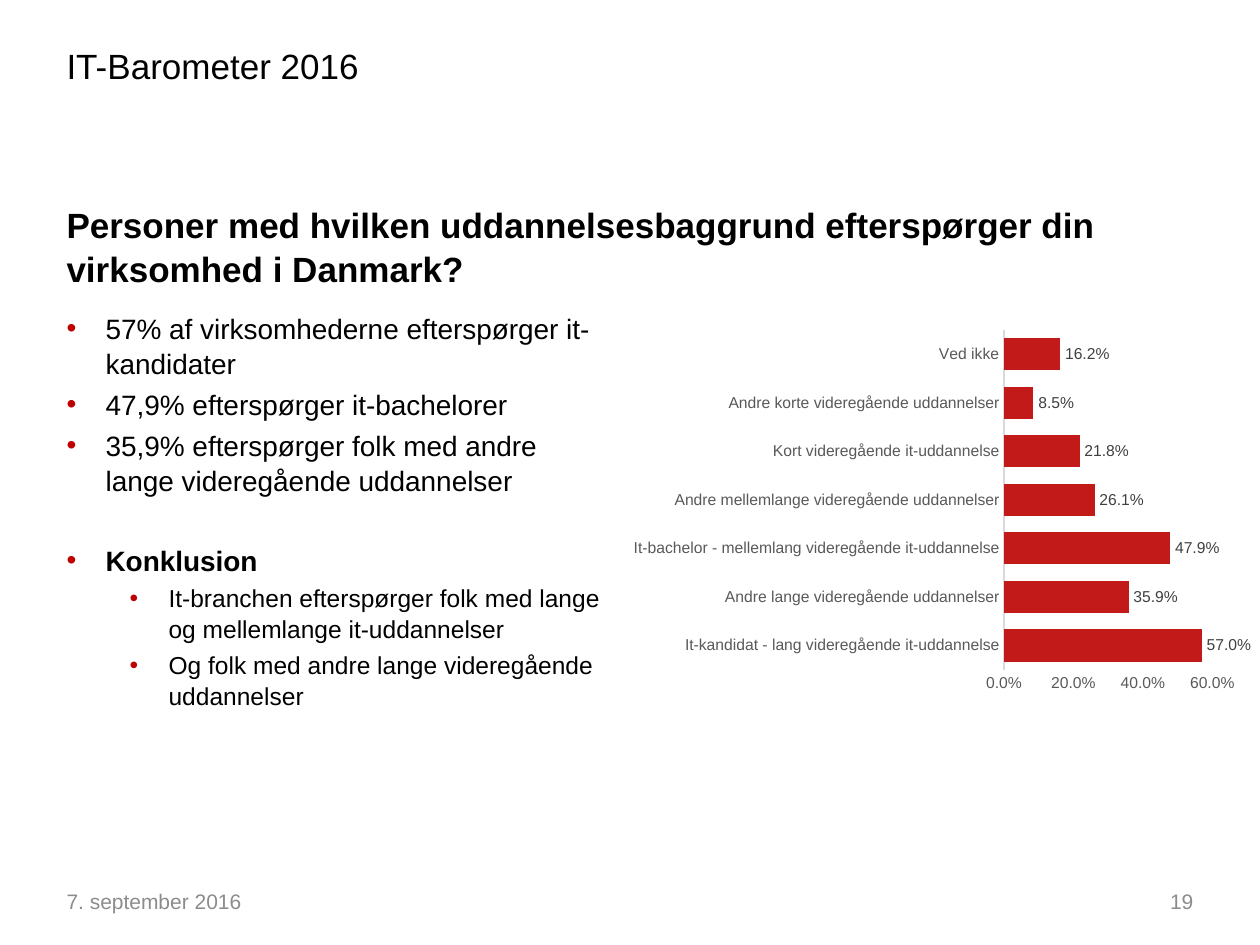
from dataclasses import dataclass
from typing import Optional

from lxml import etree
from pptx import Presentation
from pptx import util as u
from pptx.chart.data import CategoryChartData
from pptx.dml.color import RGBColor
from pptx.enum import chart as charts, text
from pptx.oxml.ns import qn

BLACK = RGBColor(0x00, 0x00, 0x00)
FOOTER_GREY = RGBColor(0x8C, 0x8C, 0x8C)
AXIS_GREY = RGBColor(0x59, 0x59, 0x59)
LABEL_GREY = RGBColor(0x40, 0x40, 0x40)
LINE_GREY = RGBColor(0xD9, 0xD9, 0xD9)
BULLET_RED = RGBColor(0xC0, 0x00, 0x00)
BAR_RED = RGBColor(0xC2, 0x19, 0x19)

FONT = "Arial"
LINE_SPACING = 1.05
MARGIN = 0.43
FOOTER_TOP, FOOTER_WIDTH = 6.95, 2.33
BULLET_HANG = 0.31
LEVEL_STEP = 0.5


@dataclass(frozen=True)
class Box:
    left: float
    top: float
    width: float
    height: float

    def lengths(self) -> tuple:
        return tuple(u.Inches(n) for n in (self.left, self.top, self.width, self.height))


@dataclass(frozen=True)
class Line:
    words: str
    size: float
    bold: bool = False
    color: RGBColor = BLACK
    level: Optional[int] = None  # bullet level; None for plain text
    extra_space: float = 0


@dataclass(frozen=True)
class Demand:
    education: str
    share: float


HEADINGS = [
    (Box(MARGIN, 0.29, 3.17, 0.4), Line("IT-Barometer 2016", 20)),
    (Box(MARGIN, 1.55, 9, 0.55),
     Line("Personer med hvilken uddannelsesbaggrund efterspørger din virksomhed i Danmark?",
          20, bold=True)),
]
DATE = Line("7. september 2016", 12, color=FOOTER_GREY)
PAGE_NUMBER = Line("19", 12, color=FOOTER_GREY)

FINDINGS = [
    Line("57% af virksomhederne efterspørger it-kandidater", 16, level=0),
    Line("47,9% efterspørger it-bachelorer", 16, level=0),
    Line("35,9% efterspørger folk med andre lange videregående uddannelser", 16, level=0),
    Line("Konklusion", 16, bold=True, level=0, extra_space=22.4),
    Line("It-branchen efterspørger folk med lange og mellemlange it-uddannelser", 14, level=1),
    Line("Og folk med andre lange videregående uddannelser", 14, level=1),
]

DEMANDS = [
    Demand("It-kandidat - lang videregående it-uddannelse", 0.57),
    Demand("Andre lange videregående uddannelser", 0.359),
    Demand("It-bachelor - mellemlang videregående it-uddannelse", 0.479),
    Demand("Andre mellemlange videregående uddannelser", 0.261),
    Demand("Kort videregående it-uddannelse", 0.218),
    Demand("Andre korte videregående uddannelser", 0.085),
    Demand("Ved ikke", 0.162),
]


def style_font(font, size: float, color: RGBColor, bold: bool = False) -> None:
    font.name = FONT
    font.size = u.Pt(size)
    font.bold = bold
    font.color.rgb = color


def add_bullet(paragraph, level: int) -> None:
    properties = paragraph._p.get_or_add_pPr()
    properties.set("marL", str(u.Inches(BULLET_HANG + LEVEL_STEP * level)))
    properties.set("indent", str(-u.Inches(BULLET_HANG)))
    color = etree.SubElement(properties, qn("a:buClr"))
    etree.SubElement(color, qn("a:srgbClr"), val=str(BULLET_RED))
    etree.SubElement(properties, qn("a:buFont"), typeface=FONT)
    etree.SubElement(properties, qn("a:buChar"), char="•")


def add_text(slide, box: Box, lines: list[Line], anchor=text.MSO_ANCHOR.TOP,
             alignment=text.PP_ALIGN.LEFT) -> None:
    frame = slide.shapes.add_textbox(*box.lengths()).text_frame
    frame.word_wrap = True
    frame.vertical_anchor = anchor
    for index, line in enumerate(lines):
        paragraph = frame.add_paragraph() if index else frame.paragraphs[0]
        if line.level is not None:
            add_bullet(paragraph, line.level)
            paragraph.level = line.level
        paragraph.alignment = alignment
        paragraph.line_spacing = LINE_SPACING
        if index:
            paragraph.space_before = u.Pt(0.2 * line.size + line.extra_space)
        run = paragraph.add_run()
        run.text = line.words
        style_font(run.font, line.size, line.color, line.bold)


def add_demand_chart(slide, box: Box, demands: list[Demand]) -> None:
    data = CategoryChartData(number_format="0.0%")
    data.categories = [demand.education for demand in demands]
    data.add_series("Series 1", [demand.share for demand in demands])
    chart = slide.shapes.add_chart(
        charts.XL_CHART_TYPE.BAR_CLUSTERED, *box.lengths(), data).chart
    chart.has_title = False
    chart.has_legend = False
    style_font(chart.font, 10, BLACK)

    for axis in (chart.category_axis, chart.value_axis):
        axis.has_major_gridlines = False
        axis.major_tick_mark = axis.minor_tick_mark = charts.XL_TICK_MARK.NONE
        style_font(axis.tick_labels.font, 9, AXIS_GREY)
    category_line = chart.category_axis.format.line
    category_line.color.rgb = LINE_GREY
    category_line.width = u.Pt(0.75)
    values = chart.value_axis
    values.format.line.fill.background()
    values.minimum_scale, values.maximum_scale, values.major_unit = 0, 0.6, 0.2
    values.tick_labels.number_format = "0.0%"
    values.tick_labels.number_format_is_linked = False

    plot = chart.plots[0]
    plot.gap_width = 50
    plot.vary_by_categories = False
    fill = plot.series[0].format.fill
    fill.solid()
    fill.fore_color.rgb = BAR_RED
    labels = plot.series[0].data_labels
    labels.show_value = True
    labels.position = charts.XL_LABEL_POSITION.OUTSIDE_END
    labels.number_format = "0.0%"
    labels.number_format_is_linked = False
    style_font(labels.font, 9, LABEL_GREY)


def main() -> None:
    presentation = Presentation()
    presentation.slide_width, presentation.slide_height = u.Inches(10), u.Inches(7.5)
    slide = presentation.slides.add_slide(presentation.slide_layouts[6])

    for box, line in HEADINGS:
        add_text(slide, box, [line])
    add_text(slide, Box(MARGIN, 2.41, 4.49, 3.54), FINDINGS)
    add_demand_chart(slide, Box(4.93, 2.56, 5, 3), DEMANDS)
    footer_right = 10 - MARGIN - FOOTER_WIDTH
    for left, line, alignment in ((MARGIN, DATE, text.PP_ALIGN.LEFT),
                                  (footer_right, PAGE_NUMBER, text.PP_ALIGN.RIGHT)):
        add_text(slide, Box(left, FOOTER_TOP, FOOTER_WIDTH, 0.4), [line],
                 text.MSO_ANCHOR.MIDDLE, alignment)

    presentation.save("out.pptx")


if __name__ == "__main__":
    main()
